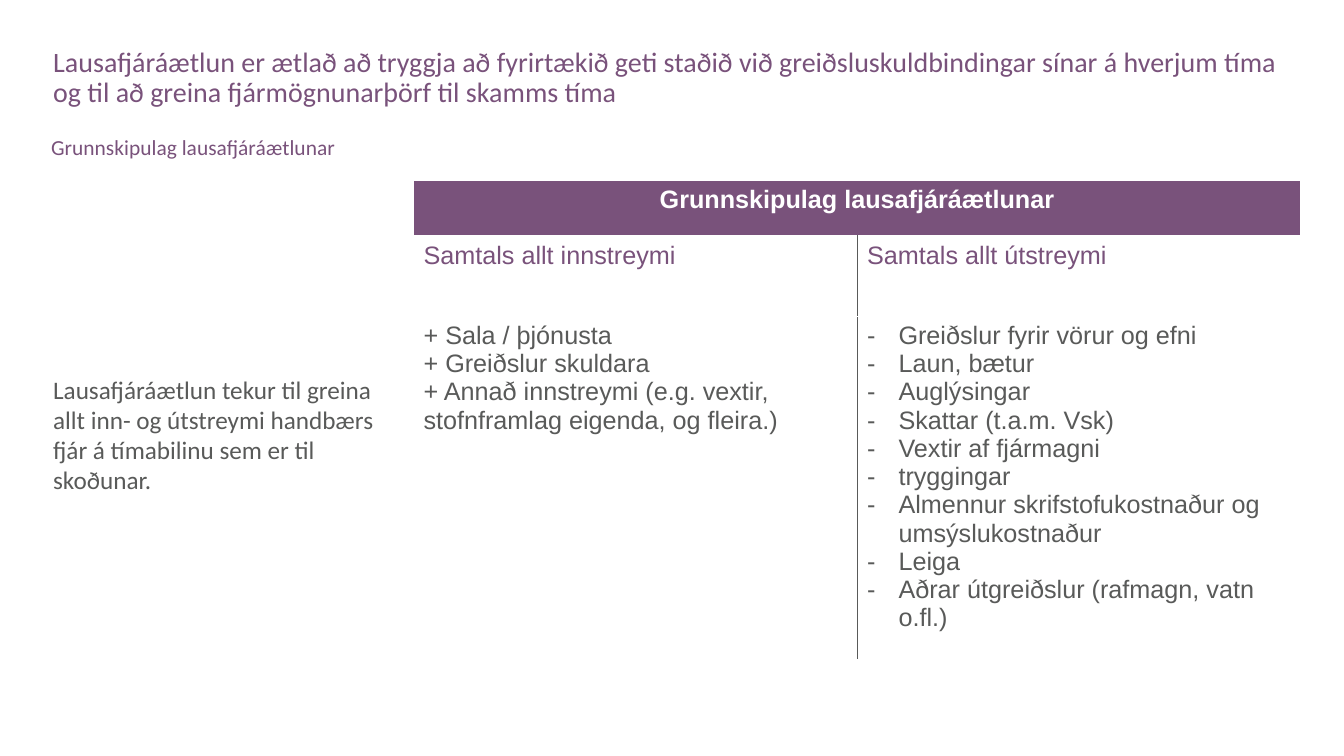
"""Build a slide on the basic structure of a cash flow plan."""
from dataclasses import dataclass

from lxml.etree import SubElement
from pptx import Presentation
from pptx.dml.color import RGBColor
from pptx.enum.text import MSO_ANCHOR, PP_ALIGN
from pptx.oxml.ns import qn
from pptx.slide import Slide
from pptx.table import _Cell
from pptx.text.text import _Paragraph
from pptx.util import Cm, Pt

PURPLE = "79527B"
GREY = "595A59"
WHITE = "FFFFFF"


@dataclass(frozen=True)
class TextBlock:
    text: str
    left: float
    top: float
    width: float
    height: float
    size: float
    color: str
    line_spacing: float = 1.0
    anchor: MSO_ANCHOR = MSO_ANCHOR.TOP


@dataclass(frozen=True)
class CellContent:
    row: int
    column: int
    lines: tuple[str, ...]
    color: str
    fill: str = WHITE
    bold: bool = False
    dashed: bool = False
    left_border: str = WHITE
    right_border: str = WHITE
    bottom_width: float = 1
    alignment: PP_ALIGN = PP_ALIGN.LEFT


TEXT_BLOCKS = (
    TextBlock(
        "Lausafjáráætlun tekur til greina allt inn- og útstreymi handbærs fjár "
        "á tímabilinu sem er til skoðunar.",
        1.09, 4.55, 8.86, 12.8, 18, GREY, anchor=MSO_ANCHOR.MIDDLE,
    ),
    TextBlock(
        "Lausafjáráætlun er ætlað að tryggja að fyrirtækið geti staðið við "
        "greiðsluskuldbindingar sínar á hverjum tíma og til að greina "
        "fjármögnunarþörf til skamms tíma",
        1.09, 1.09, 31.85, 2.13, 20, PURPLE, 0.9,
    ),
    TextBlock(
        "Grunnskipulag lausafjáráætlunar",
        1.04, 3.43, 31.9, 0.71, 15.3, PURPLE, 0.7,
    ),
)

CELLS = (
    CellContent(
        0, 0, ("Grunnskipulag lausafjáráætlunar",), WHITE, PURPLE,
        bold=True, bottom_width=3, alignment=PP_ALIGN.CENTER,
    ),
    CellContent(1, 0, ("Samtals allt innstreymi",), PURPLE, right_border=GREY),
    CellContent(1, 1, ("Samtals allt útstreymi",), PURPLE, left_border=GREY),
    CellContent(
        2, 0,
        (
            "+ Sala / þjónusta",
            "+ Greiðslur skuldara",
            "+ Annað innstreymi (e.g. vextir, stofnframlag eigenda, og fleira.)",
        ),
        GREY, right_border=GREY,
    ),
    CellContent(
        2, 1,
        (
            "Greiðslur fyrir vörur og efni",
            "Laun, bætur",
            "Auglýsingar",
            "Skattar (t.a.m. Vsk)",
            "Vextir af fjármagni",
            "tryggingar",
            "Almennur skrifstofukostnaður og umsýslukostnaður",
            "Leiga",
            "Aðrar útgreiðslur (rafmagn, vatn o.fl.)",
        ),
        GREY, dashed=True, left_border=GREY,
    ),
)

COLUMN_WIDTH = 11.18
ROW_HEIGHTS = (1.42, 2.01, 8.06)


def rgb(value: str) -> RGBColor:
    return RGBColor.from_string(value)


def add_run(
    paragraph: _Paragraph, text: str, font: str, size: float, color: str, bold: bool = False
) -> None:
    run = paragraph.add_run()
    run.text = text
    run.font.name = font
    run.font.size = Pt(size)
    run.font.bold = bold
    run.font.color.rgb = rgb(color)


def add_text_block(slide: Slide, block: TextBlock) -> None:
    shape = slide.shapes.add_textbox(
        Cm(block.left), Cm(block.top), Cm(block.width), Cm(block.height)
    )
    frame = shape.text_frame
    frame.word_wrap = True
    frame.vertical_anchor = block.anchor
    paragraph = frame.paragraphs[0]
    paragraph.line_spacing = block.line_spacing
    add_run(paragraph, block.text, "Calibri", block.size, block.color)


def add_dash(paragraph: _Paragraph) -> None:
    properties = paragraph._p.get_or_add_pPr()
    properties.set("marL", str(Cm(0.79)))
    properties.set("indent", str(-Cm(0.79)))
    bullet_color = SubElement(properties, qn("a:buClr"))
    SubElement(bullet_color, qn("a:srgbClr"), val=GREY)
    SubElement(properties, qn("a:buFont"), typeface="Arial")
    SubElement(properties, qn("a:buChar"), char="-")


def add_border(cell: _Cell, side: str, color: str, width: float) -> None:
    properties = cell._tc.get_or_add_tcPr()
    line = SubElement(properties, qn(f"a:ln{side}"), w=str(Pt(width)))
    fill = SubElement(line, qn("a:solidFill"))
    SubElement(fill, qn("a:srgbClr"), val=color)


def fill_cell(cell: _Cell, content: CellContent) -> None:
    add_border(cell, "L", content.left_border, 1)
    add_border(cell, "R", content.right_border, 1)
    add_border(cell, "T", WHITE, 3 if content.row == 1 else 1)
    add_border(cell, "B", WHITE, content.bottom_width)
    cell.fill.solid()
    cell.fill.fore_color.rgb = rgb(content.fill)
    frame = cell.text_frame
    for index, line in enumerate(content.lines):
        paragraph = frame.add_paragraph() if index else frame.paragraphs[0]
        paragraph.alignment = content.alignment
        if content.dashed:
            add_dash(paragraph)
        add_run(paragraph, line, "Arial", 18, content.color, content.bold)


def add_cash_flow_table(slide: Slide) -> None:
    table = slide.shapes.add_table(
        len(ROW_HEIGHTS), 2, Cm(10.42), Cm(4.55), Cm(2 * COLUMN_WIDTH), Cm(sum(ROW_HEIGHTS))
    ).table
    table.horz_banding = False
    for column in table.columns:
        column.width = Cm(COLUMN_WIDTH)
    for row, height in zip(table.rows, ROW_HEIGHTS):
        row.height = Cm(height)
    table.cell(0, 0).merge(table.cell(0, 1))
    for content in CELLS:
        fill_cell(table.cell(content.row, content.column), content)


def main() -> None:
    presentation = Presentation()
    presentation.slide_width = Cm(33.87)
    presentation.slide_height = Cm(19.05)
    slide = presentation.slides.add_slide(presentation.slide_layouts[6])
    for block in TEXT_BLOCKS:
        add_text_block(slide, block)
    add_cash_flow_table(slide)
    presentation.save("out.pptx")


if __name__ == "__main__":
    main()
